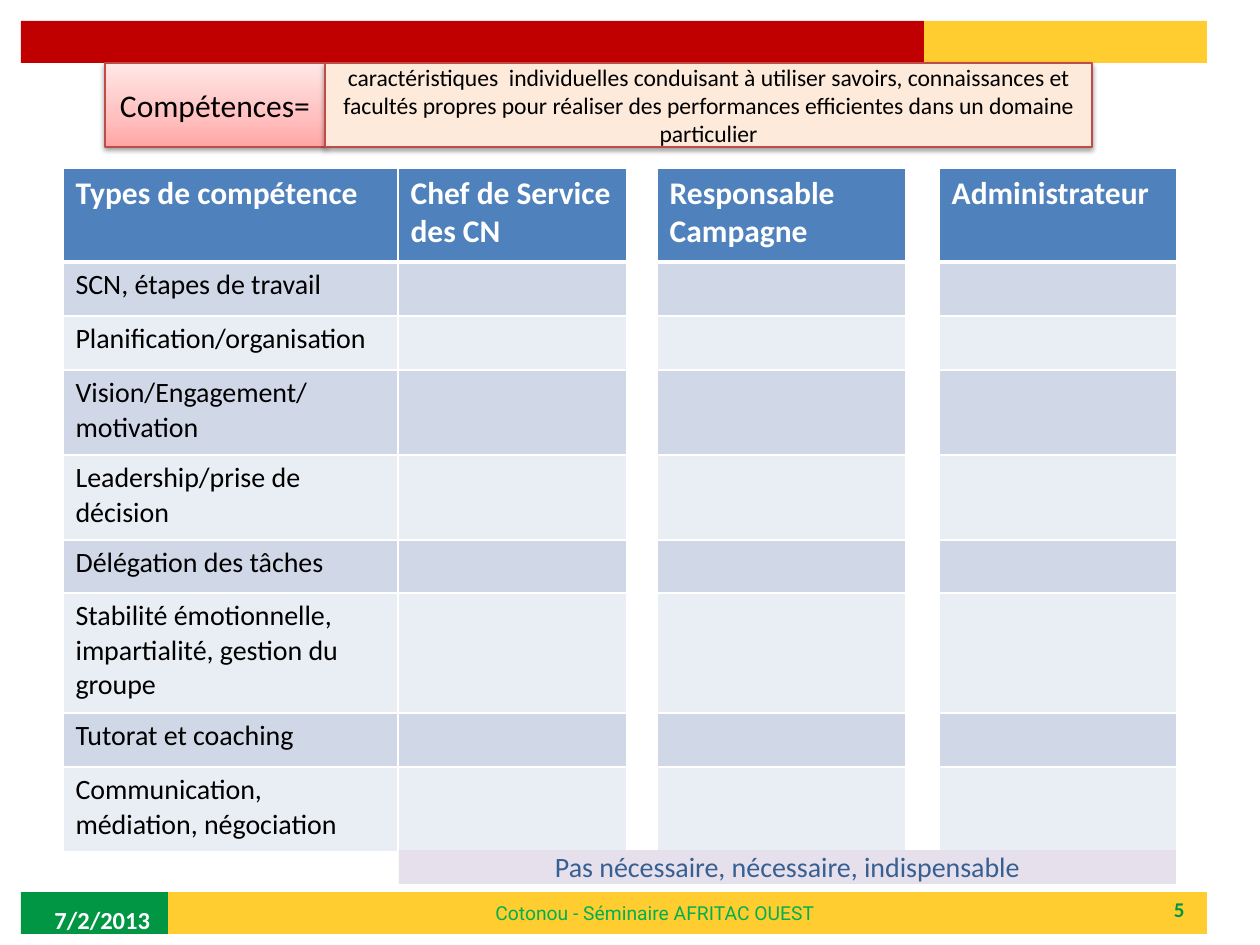
from dataclasses import dataclass

from lxml import etree
from pptx import Presentation
from pptx.dml.color import RGBColor
from pptx.enum.shapes import MSO_SHAPE
from pptx.enum.text import MSO_ANCHOR, PP_ALIGN
from pptx.oxml import parse_xml
from pptx.oxml.ns import qn
from pptx.util import Pt

RECT = MSO_SHAPE.RECTANGLE
TOP, MID = MSO_ANCHOR.TOP, MSO_ANCHOR.MIDDLE
LEFT, MIDST, RIGHT = PP_ALIGN.LEFT, PP_ALIGN.CENTER, PP_ALIGN.RIGHT
DPI = 126
NS = 'xmlns:a="http://schemas.openxmlformats.org/drawingml/2006/main"'


@dataclass(frozen=True)
class Theme:
    font: str = "Calibri"
    foot_font: str = "Roboto"
    white: str = "FFFFFF"
    black: str = "000000"
    green: str = "009644"
    lime: str = "00B050"
    gold: str = "FFCD2F"
    red: str = "C00000"
    edge: str = "BF4C48"
    peach: str = "FDEADA"
    lilac: str = "E6E0EC"
    navy: str = "376092"
    head: str = "4F81BD"
    bands: tuple = ("D0D8E8", "E9EDF4")
    blush: tuple = ((0, "FFA6A5"), (35, "FFC0BF"), (100, "FFE7E7"))
    big: float = 18
    body: float = 16
    date: float = 14
    note: float = 13.5
    page: float = 12
    foot: float = 11


T = Theme()

COLS = (335, 229, 29, 249, 33, 238)
GAPS = (2, 4)
ROWS = (94, 54, 54, 85, 85, 53, 120, 54, 85)
HEADS = {0: "Types de compétence", 1: "Chef de Service des CN",
         3: "Responsable Campagne", 5: "Administrateur"}
SKILLS = (
    "SCN, étapes de travail",
    "Planification/organisation",
    "Vision/Engagement/motivation",
    "Leadership/prise de décision",
    "Délégation des tâches",
    "Stabilité émotionnelle, impartialité, gestion du groupe",
    "Tutorat et coaching",
    "Communication, médiation, négociation",
)


def px(n):
    return round(n * 914400 / DPI)


def rgb(code):
    return RGBColor.from_string(code)


def write(frame, text, size, color, bold=False, align=LEFT, font=T.font):
    para = frame.paragraphs[0]
    para.alignment = align
    run = para.add_run()
    run.text = text
    run.font.name = font
    run.font.size = Pt(size)
    run.font.bold = bold
    run.font.color.rgb = rgb(color)


def add_box(slide, at, fill):
    box = slide.shapes.add_shape(RECT, *map(px, at))
    box.shadow.inherit = False
    box.fill.solid()
    box.fill.fore_color.rgb = rgb(fill)
    box.line.fill.background()
    box.text_frame.word_wrap = True
    return box


def add_text(slide, at, text, size, color, anchor=MID, wrap=True, **look):
    frame = slide.shapes.add_textbox(*map(px, at)).text_frame
    frame.word_wrap = wrap
    frame.vertical_anchor = anchor
    write(frame, text, size, color, **look)


def add_card(slide, at, fill, text, size):
    """Add an outlined box with a soft shadow below it."""
    card = add_box(slide, at, fill)
    card.line.color.rgb = rgb(T.edge)
    card.line.width = Pt(0.75)
    card.text_frame.vertical_anchor = MID
    write(card.text_frame, text, size, T.black, align=MIDST)
    effects = card._element.spPr.find(qn("a:effectLst"))
    effects.append(parse_xml(
        f'<a:outerShdw {NS} blurRad="{Pt(3.1)}" dist="{Pt(1.6)}" dir="5400000" '
        f'rotWithShape="0"><a:srgbClr val="{T.black}"><a:alpha val="38000"/>'
        '</a:srgbClr></a:outerShdw>'))
    return card


def shade(shape, stops):
    """Replace the solid fill with a gradient that runs upwards."""
    marks = "".join(f'<a:gs pos="{pos * 1000}"><a:srgbClr val="{code}"/></a:gs>'
                    for pos, code in stops)
    props = shape._element.spPr
    props.replace(props.find(qn("a:solidFill")), parse_xml(
        f'<a:gradFill {NS} rotWithShape="1"><a:gsLst>{marks}</a:gsLst>'
        '<a:lin ang="16200000" scaled="0"/></a:gradFill>'))


def add_edges(cell, top, bottom):
    """Draw white borders; they must come before the fill in the cell."""
    props = cell._tc.get_or_add_tcPr()
    sides = (("lnL", 1), ("lnR", 1), ("lnT", top), ("lnB", bottom))
    for i, (side, width) in enumerate(sides):
        line = etree.Element(qn(f"a:{side}"), w=str(Pt(width)))
        fill = etree.SubElement(line, qn("a:solidFill"))
        etree.SubElement(fill, qn("a:srgbClr"), val=T.white)
        props.insert(i, line)


def add_grid(slide):
    grid = slide.shapes.add_table(len(ROWS), len(COLS), px(63), px(168),
                                  px(sum(COLS)), px(sum(ROWS))).table
    for col, width in zip(grid.columns, COLS):
        col.width = px(width)
    for r, height in enumerate(ROWS):
        grid.rows[r].height = px(height)
        tint = T.bands[(r - 1) % 2] if r else T.head
        for c in range(len(COLS)):
            cell = grid.cell(r, c)
            cell.fill.solid()
            cell.fill.fore_color.rgb = rgb(T.white if c in GAPS else tint)
            add_edges(cell, 3 if r == 1 else 1, 1 if r else 3)
    for c, text in HEADS.items():
        write(grid.cell(0, c).text_frame, text, T.big, T.white, bold=True)
    for r, text in enumerate(SKILLS, 1):
        write(grid.cell(r, 0).text_frame, text, T.body, T.black)


def add_frame(slide):
    """Add the top and bottom bars with date, footer and page number."""
    for at, fill in (((21, 892, 147, 42), T.green),
                     ((168, 892, 1039, 42), T.gold),
                     ((21, 21, 903, 42), T.red),
                     ((924, 21, 283, 42), T.gold)):
        add_box(slide, at, fill)
    add_text(slide, (903, 892, 294, 34), "5", T.page, T.green,
             bold=True, align=RIGHT)
    add_text(slide, (42, 895, 294, 50), "7/2/2013", T.date, T.white, bold=True)
    add_text(slide, (483, 895, 349, 37), "Cotonou - Séminaire AFRITAC OUEST",
             T.foot, T.lime, anchor=TOP, wrap=False, font=T.foot_font)


def add_key(slide):
    key = add_box(slide, (399, 850, 777, 34), T.lilac)
    frame = key.text_frame
    frame.vertical_anchor = TOP
    frame.margin_top = frame.margin_bottom = 0
    write(frame, "Pas nécessaire, nécessaire, indispensable", T.body, T.navy,
          align=MIDST)


def main():
    deck = Presentation()
    deck.slide_width, deck.slide_height = px(1260), px(945)
    slide = deck.slides.add_slide(deck.slide_layouts[6])
    add_frame(slide)
    add_grid(slide)
    term = add_card(slide, (105, 63, 220, 84), T.peach, "Compétences=", T.big)
    shade(term, T.blush)
    add_card(slide, (325, 63, 767, 84), T.peach,
             "caractéristiques  individuelles conduisant à utiliser savoirs, "
             "connaissances et facultés propres pour réaliser des performances "
             "efficientes dans un domaine particulier", T.note)
    add_key(slide)
    deck.save("out.pptx")


if __name__ == "__main__":
    main()
